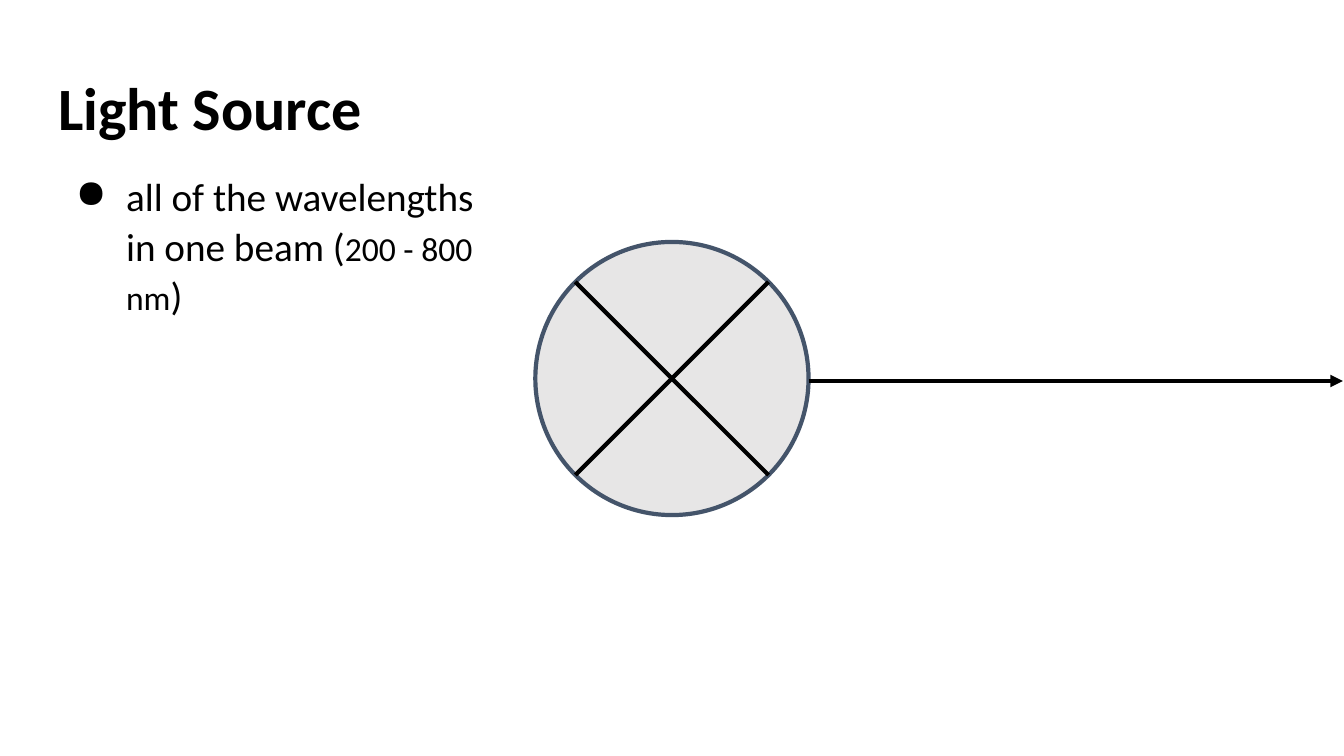
from dataclasses import dataclass
from math import sqrt

from lxml.etree import SubElement
from pptx import Presentation
from pptx.dml.color import RGBColor
from pptx.enum.shapes import MSO_CONNECTOR as Connector, MSO_SHAPE as Preset
from pptx.enum.text import MSO_ANCHOR as Anchor
from pptx.oxml.ns import qn
from pptx.util import Inches, Pt

WIDTH, HEIGHT = Inches(13.33), Inches(7.5)
COLORS = {"ink": "000000", "lamp_fill": "E7E6E6", "lamp_edge": "44546A"}
STROKE = Pt(3)
INSET = Inches(0.13)


def color(name: str) -> RGBColor:
    return RGBColor.from_string(COLORS[name])


# Lengths are percentages of the slide's width and height
def across(share: float) -> int:
    return round(WIDTH * share / 100)


def down(share: float) -> int:
    return round(HEIGHT * share / 100)


@dataclass
class Area:
    left: float
    top: float
    width: float
    height: float

    def box(self) -> tuple[int, int, int, int]:
        return across(self.left), down(self.top), across(self.width), down(self.height)


@dataclass
class TextBlock:
    area: Area
    runs: list[tuple[str, float]]
    line_spacing: float
    bold: bool = False
    bullet: str = ""


@dataclass
class Ray:
    start: tuple[float, float]
    end: tuple[float, float]
    arrow: bool = False


def add_bullet(paragraph, symbol: str) -> None:
    properties = paragraph._p.get_or_add_pPr()
    properties.set("marL", str(Inches(0.67)))
    properties.set("indent", str(Inches(-0.5)))
    bullet_color = SubElement(properties, qn("a:buClr"))
    SubElement(bullet_color, qn("a:srgbClr"), val=COLORS["ink"])
    SubElement(properties, qn("a:buChar"), char=symbol)


def draw_text(slide, block: TextBlock) -> None:
    frame = slide.shapes.add_textbox(*block.area.box()).text_frame
    frame_format = {"word_wrap": True, "vertical_anchor": Anchor.TOP}
    for side in ("left", "top", "right", "bottom"):
        frame_format[f"margin_{side}"] = INSET
    for name, value in frame_format.items():
        setattr(frame, name, value)
    paragraph = frame.paragraphs[0]
    paragraph.line_spacing = block.line_spacing
    if block.bullet:
        add_bullet(paragraph, block.bullet)
    for text, size in block.runs:
        run = paragraph.add_run()
        run.text = text
        font_format = {"name": "Calibri", "size": Pt(size), "bold": block.bold}
        for name, value in font_format.items():
            setattr(run.font, name, value)
        run.font.color.rgb = color("ink")


def draw_lamp(slide, area: Area) -> None:
    shape = slide.shapes.add_shape(Preset.OVAL, *area.box())
    shape.shadow.inherit = False
    shape.fill.solid()
    shape.fill.fore_color.rgb = color("lamp_fill")
    shape.line.color.rgb = color("lamp_edge")
    shape.line.width = STROKE


def draw_ray(slide, ray: Ray) -> None:
    (x1, y1), (x2, y2) = ray.start, ray.end
    connector = slide.shapes.add_connector(
        Connector.STRAIGHT, across(x1), down(y1), across(x2), down(y2))
    connector.line.color.rgb = color("ink")
    connector.line.width = STROKE
    if ray.arrow:
        SubElement(connector.line._get_or_add_ln(), qn("a:tailEnd"), type="triangle")
    SubElement(connector._element.spPr, qn("a:effectLst"))


TITLE = TextBlock(Area(3.38, 8.67, 93.17, 11.2), [("Light Source", 42.9)], 0.9, bold=True)
BODY = TextBlock(
    Area(3.38, 20.8, 35.26, 59.33),
    [("all of the wavelengths in one beam (", 28), ("200 - 800 nm", 24), (")", 28)],
    1.05, bullet="●")
LAMP = Area(39.83, 32, 20.33, 36.13)


def lamp_rays(lamp: Area) -> list[Ray]:
    # The cross meets the rim at 45 degrees
    center_x, center_y = lamp.left + lamp.width / 2, lamp.top + lamp.height / 2
    reach_x, reach_y = (side / 2 / sqrt(2) for side in (lamp.width, lamp.height))
    cross = [
        Ray((center_x - way * reach_x, center_y - reach_y),
            (center_x + way * reach_x, center_y + reach_y))
        for way in (1, -1)]
    beam_y = 50.4
    beam = Ray((lamp.left + lamp.width, beam_y), (99.92, beam_y), arrow=True)
    return [beam, *cross]


def main() -> None:
    presentation = Presentation()
    presentation.slide_width, presentation.slide_height = WIDTH, HEIGHT
    slide = presentation.slides.add_slide(presentation.slide_layouts[6])

    # Heading
    draw_text(slide, TITLE)

    # Lamp with its beam
    draw_lamp(slide, LAMP)
    for ray in lamp_rays(LAMP):
        draw_ray(slide, ray)

    # Explanation
    draw_text(slide, BODY)
    presentation.save("out.pptx")


if __name__ == "__main__":
    main()
